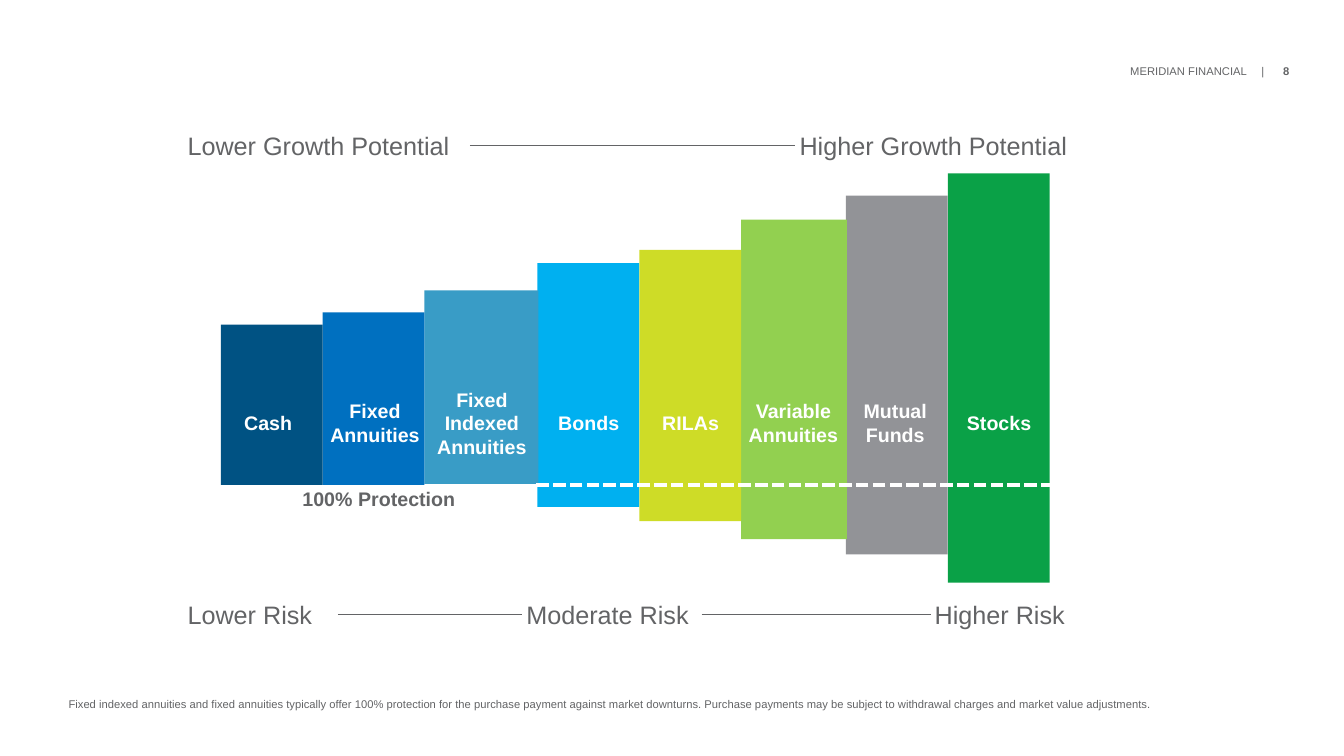
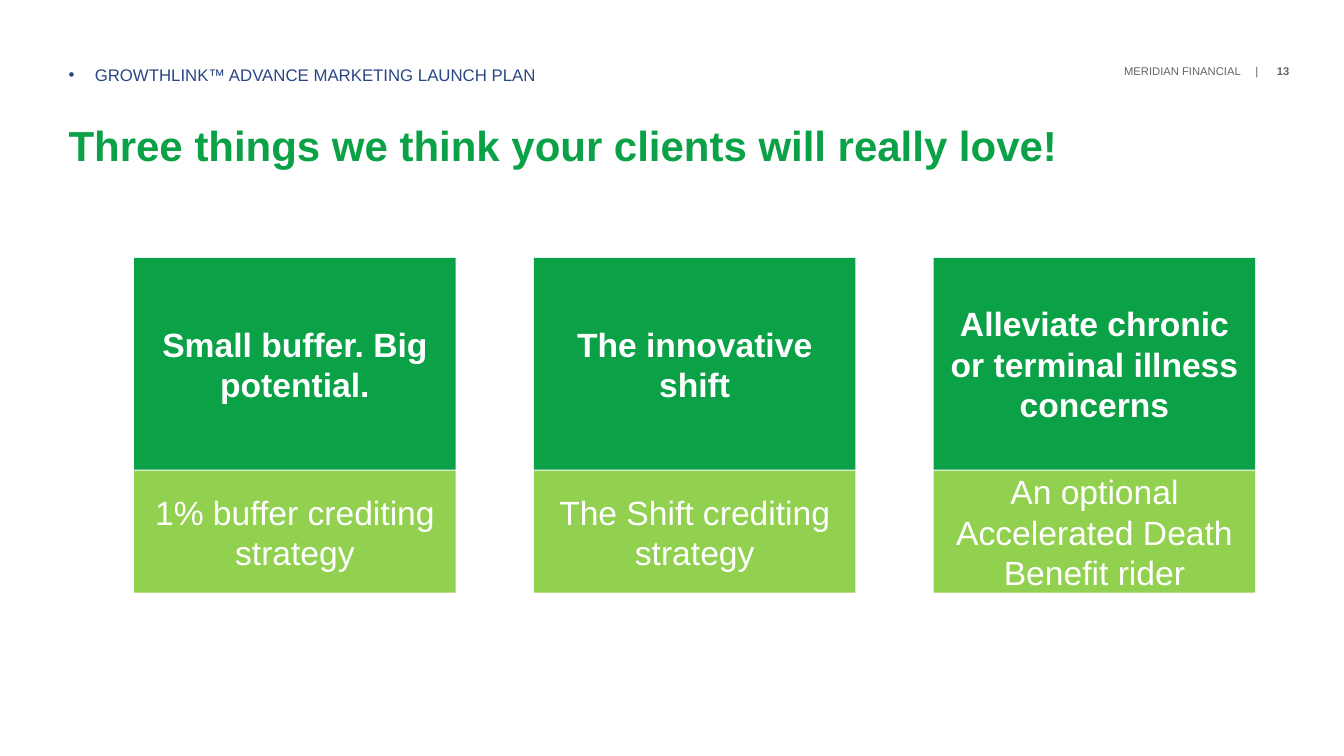
from lxml import etree
from pptx import Presentation
from pptx.dml.color import RGBColor
from pptx.enum import dml, shapes, text
from pptx.oxml import ns
from pptx.util import Inches, Pt

GREY = RGBColor(0x63, 0x64, 0x66)
WHITE = RGBColor(0xFF, 0xFF, 0xFF)
GREEN = RGBColor(0x0A, 0xA1, 0x47)
LIME = RGBColor(0x92, 0xD0, 0x50)
NAVY = RGBColor(0x28, 0x46, 0x84)
SILVER = RGBColor(0x92, 0x93, 0x97)
YELLOW = RGBColor(0xCE, 0xDC, 0x27)
SKY = RGBColor(0x00, 0xB0, 0xF0)
STEEL = RGBColor(0x39, 0x9C, 0xC6)
BLUE = RGBColor(0x00, 0x70, 0xC0)
DEEP_BLUE = RGBColor(0x00, 0x52, 0x83)

LEFT, CENTER = text.PP_ALIGN.LEFT, text.PP_ALIGN.CENTER
TOP, MIDDLE, BOTTOM = (text.MSO_ANCHOR.TOP, text.MSO_ANCHOR.MIDDLE,
                       text.MSO_ANCHOR.BOTTOM)


def write(box, spans, size, colour, bold=False, align=LEFT, anchor=TOP,
          inset=0.0, line=None):
    """Fill a box with one paragraph of spans; the last span may be bold."""
    frame = box.text_frame
    frame.word_wrap = True
    frame.auto_size = text.MSO_AUTO_SIZE.NONE
    frame.vertical_anchor = anchor
    frame.margin_left = frame.margin_right = Inches(inset)
    frame.margin_top = frame.margin_bottom = 0
    para = frame.paragraphs[0]
    para.alignment = align
    para.space_before = Pt(0)
    if line:
        para.line_spacing = Pt(line)
    for words in spans:
        span = para.add_run()
        span.text = words
        span.font.name = "Arial"
        span.font.size = Pt(size)
        span.font.color.rgb = colour
        span.font.bold = bold and words == spans[-1]
    return para


def add_page(number):
    """Add a slide that carries the company name and page number."""
    page = deck.slides.add_slide(deck.slide_layouts[1])
    box = page.shapes.add_textbox(
        Inches(10.53), Inches(0.64), Inches(2.4), Inches(0.15))
    para = write(box, ["\tMERIDIAN FINANCIAL\t|\t", str(number)], 8, GREY, bold=True)
    tabs = etree.SubElement(para._p.get_or_add_pPr(), ns.qn("a:tabLst"))
    digits = 0.06 * len(str(number))
    for stop in (1.9 - digits, 2.07 - digits, 2.26):
        etree.SubElement(tabs, ns.qn("a:tab"), pos=str(Inches(stop)), algn="r")
    return page


deck = Presentation()
deck.slide_width, deck.slide_height = Inches(13.33), Inches(7.5)

# Risk and growth slide
page = add_page(8)
title, note = page.placeholders
title._element.getparent().remove(title._element)
note.left, note.top, note.width, note.height = (
    Inches(0.68), Inches(6.64), Inches(11.97), Inches(0.41))
para = write(note, ["Fixed indexed annuities and fixed annuities typically offer 100% "
                    "protection for the purchase payment against market downturns. "
                    "Purchase payments may be subject to withdrawal charges and market "
                    "value adjustments."], 8, GREY, anchor=BOTTOM, line=26)
props = para._p.get_or_add_pPr()
props.set("marL", "0")
props.set("indent", "0")
etree.SubElement(props, ns.qn("a:buNone"))

box = page.shapes.add_textbox(Inches(3), Inches(4.83), Inches(1.6), Inches(0.33))
write(box, ["100% Protection"], 14, GREY, bold=True)

# label, label centre, bar left, top, width, height, colour
bars = [
    ("Stocks", 9.91, 9.4, 1.72, 1.01, 4.06, GREEN),
    ("Mutual Funds", 8.88, 8.39, 1.94, 1.01, 3.56, SILVER),
    ("Variable Annuities", 7.87, 7.35, 2.18, 1.05, 3.17, LIME),
    ("RILAs", 6.85, 6.34, 2.48, 1.01, 2.69, YELLOW),
    ("Bonds", 5.84, 5.33, 2.61, 1.01, 2.42, SKY),
    ("Fixed Indexed Annuities", 4.78, 4.21, 2.88, 1.13, 1.92, STEEL),
    ("Fixed Annuities", 3.72, 3.2, 3.1, 1.01, 1.71, BLUE),
    ("Cash", 2.66, 2.19, 3.22, 1.01, 1.59, DEEP_BLUE),
]
for label, centre, left, top, width, height, colour in bars:
    bar = page.shapes.add_shape(
        shapes.MSO_SHAPE.RECTANGLE,
        Inches(left), Inches(top), Inches(width), Inches(height))
    bar.shadow.inherit = False
    bar.fill.solid()
    bar.fill.fore_color.rgb = colour
    bar.line.fill.background()
for label, centre, *_ in bars:
    box = page.shapes.add_textbox(
        Inches(centre - 0.63), Inches(3.79), Inches(1.26), Inches(0.81))
    write(box, [label], 14, WHITE, bold=True, align=CENTER, anchor=MIDDLE, inset=0.1)

captions = {}
for words, left, middle, width in [
    ("Lower Growth Potential", 1.82, 1.44, 2.84),
    ("Higher Growth Potential", 7.89, 1.44, 2.9),
    ("Lower Risk", 1.82, 6.1, 1.53),
    ("Moderate Risk", 5.18, 6.1, 1.78),
    ("Higher Risk", 9.23, 6.1, 1.57),
]:
    box = page.shapes.add_textbox(
        Inches(left), Inches(middle - 0.2), Inches(width), Inches(0.4))
    write(box, [words], 18, GREY, anchor=MIDDLE, inset=0.04)
    captions[words] = box

protection = page.shapes.add_connector(
    shapes.MSO_CONNECTOR.STRAIGHT,
    Inches(10.45), Inches(4.81), Inches(5.32), Inches(4.81))
protection.line.dash_style = dml.MSO_LINE.SQUARE_DOT
lines = [(protection, WHITE, 3)]
for start, end in [
    ("Lower Growth Potential", "Higher Growth Potential"),
    ("Lower Risk", "Moderate Risk"),
    ("Moderate Risk", "Higher Risk"),
]:
    link = page.shapes.add_connector(shapes.MSO_CONNECTOR.STRAIGHT, 0, 0, 0, 0)
    link.begin_connect(captions[start], 3)
    link.end_connect(captions[end], 1)
    lines.append((link, GREY, 0.5))
for connector, colour, weight in lines:
    connector.line.color.rgb = colour
    connector.line.width = Pt(weight)
    etree.SubElement(connector._element.spPr, ns.qn("a:effectLst"))

# Three benefits slide
page = add_page(13)
title, topic = page.placeholders
title.left, title.top, title.width, title.height = (
    Inches(0.68), Inches(1.26), Inches(11.94), Inches(0.73))
write(title, ["Three things we think your clients will really love!"],
      30, GREEN, bold=True, line=31)
topic.left, topic.top, topic.width, topic.height = (
    Inches(0.68), Inches(0.48), Inches(9.53), Inches(0.44))
para = write(topic, ["GROWTHLINK™ ADVANCE MARKETING LAUNCH PLAN"], 12, NAVY, line=26)
props = para._p.get_or_add_pPr()
props.set("marL", str(Inches(0.26)))
props.set("indent", str(-Inches(0.26)))
etree.SubElement(props, ns.qn("a:buFont"), typeface="Arial")
etree.SubElement(props, ns.qn("a:buChar"), char="•")

cards = [
    ("Small buffer. Big potential.", "1% buffer crediting strategy"),
    ("The innovative shift", "The Shift crediting strategy"),
    ("Alleviate chronic or terminal illness concerns",
     "An optional Accelerated Death Benefit rider"),
]
card_step = (9.26 - 1.33) / 2
for column, (heading, detail) in enumerate(cards):
    for words, top, height, colour in [
        (heading, 2.56, 2.1, GREEN),
        (detail, 4.67, 1.21, LIME),
    ]:
        card = page.shapes.add_shape(
            shapes.MSO_SHAPE.RECTANGLE, Inches(1.33 + column * card_step),
            Inches(top), Inches(3.19), Inches(height))
        card.shadow.inherit = False
        card.fill.solid()
        card.fill.fore_color.rgb = colour
        card.line.fill.background()
        write(card, [words], 24, WHITE, bold=words == heading, align=CENTER,
              anchor=MIDDLE, inset=0.1)

deck.save("out.pptx")
